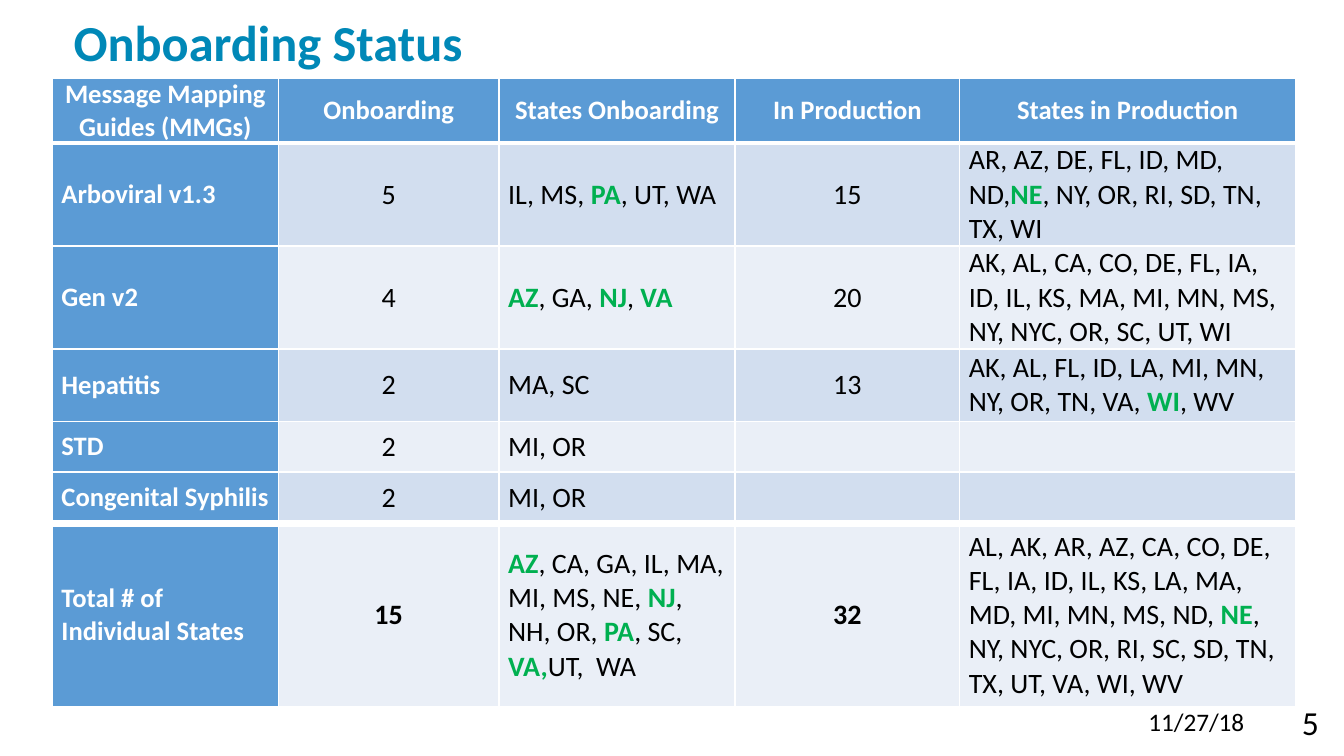
import pptx
import pptx.util
import pptx.dml.color
import pptx.enum.text
import pptx.oxml
import pptx.oxml.ns

Inches, Pt = pptx.util.Inches, pptx.util.Pt
ALIGN = pptx.enum.text.PP_ALIGN
ANCHOR = pptx.enum.text.MSO_ANCHOR
SIZE = (13.33, 7.5)
COLORS = {"title": "0088B7", "head": "5B9BD5", "odd": "D2DEEF", "even": "EAEFF7",
          "new": "00B050", "text": "000000", "white": "FFFFFF"}

# Table grid: widths and heights in inches, rule weights in points
COLS = [2.24, 2.19, 2.34, 2.23, 3.33]
ROWS = [0.61, 1.02, 1.02, 0.72, 0.5, 0.51, 1.82]
RULES = [1, 3, 1, 1, 1, 1, 6, 1]

# States between asterisks are marked in green
DATA = [
    ["Message Mapping Guides (MMGs)", "Onboarding", "States Onboarding",
     "In Production", "States in Production"],
    ["Arboviral v1.3", "5", "IL, MS, *PA*, UT, WA", "15",
     "AR, AZ, DE, FL, ID, MD, ND,*NE*, NY, OR, RI, SD, TN, TX, WI"],
    ["Gen v2", "4", "*AZ*, GA, *NJ*, *VA*", "20",
     "AK, AL, CA, CO, DE, FL, IA, ID, IL, KS, MA, MI, MN, MS, NY, NYC, OR, SC, UT, WI"],
    ["Hepatitis", "2", "MA, SC", "13",
     "AK, AL, FL, ID, LA, MI, MN, NY, OR, TN, VA, *WI*, WV"],
    ["STD", "2", "MI, OR", "", ""],
    ["Congenital Syphilis", "2", "MI, OR", "", ""],
    ["Total # of Individual States", "15",
     "*AZ*, CA, GA, IL, MA, MI, MS, NE, *NJ*, NH, OR, *PA*, SC, *VA,*UT,  WA", "32",
     "AL, AK, AR, AZ, CA, CO, DE, FL, IA, ID, IL, KS, LA, MA, MD, MI, MN, MS, ND, "
     "*NE*, NY, NYC, OR, RI, SC, SD, TN, TX, UT, VA, WI, WV"],
]


def apply(item, values):
    for name, value in values.items():
        setattr(item, name, value)


def paint(name):
    return pptx.dml.color.RGBColor.from_string(COLORS[name])


def write(frame, text, size, color="text", bold=False, align=ALIGN.LEFT):
    para = frame.paragraphs[0]
    para.alignment = align
    for i, part in enumerate(text.split("*")):
        if part:
            run = para.add_run()
            run.text = part
            mark = i % 2 == 1
            apply(run.font, {"name": "Calibri", "size": Pt(size), "bold": bold or mark})
            run.font.color.rgb = paint("new" if mark else color)
    return para


def add_title(slide, box):
    title = slide.shapes.title
    apply(title, dict(zip(("left", "top", "width", "height"), map(Inches, box))))
    apply(title.text_frame, {"vertical_anchor": ANCHOR.BOTTOM, "word_wrap": True,
                             "auto_size": pptx.enum.text.MSO_AUTO_SIZE.NONE})
    para = write(title.text_frame, "Onboarding Status", 36, "title", True)
    para.line_spacing = Pt(40)


def add_rules(cell, row):
    props = cell._tc.get_or_add_tcPr()
    space = pptx.oxml.ns.nsdecls("a")
    for side, weight in zip("LRTB", (1, 1, RULES[row], RULES[row + 1])):
        props.append(pptx.oxml.parse_xml(
            f'<a:ln{side} {space} w="{Pt(weight)}"><a:solidFill>'
            f'<a:srgbClr val="{COLORS["white"]}"/></a:solidFill></a:ln{side}>'))


def fill_cell(cell, row, col, text):
    head = row == 0 or col == 0
    count = col in (1, 3)
    apply(cell, {"vertical_anchor": ANCHOR.MIDDLE, "margin_left": Inches(0.09),
                 "margin_right": Inches(0.09), "margin_top": 0, "margin_bottom": 0})
    add_rules(cell, row)
    cell.fill.solid()
    cell.fill.fore_color.rgb = paint("head" if head else "odd" if row % 2 else "even")
    total = count and row == len(DATA) - 1
    write(cell.text_frame, text, 19 if head else 20, "white" if head else "text",
          head or total, ALIGN.CENTER if row == 0 or count else ALIGN.LEFT)


def add_status(slide, left, top):
    box = map(Inches, (left, top, sum(COLS), sum(ROWS)))
    table = slide.shapes.add_table(len(ROWS), len(COLS), *box).table
    apply(table, {"first_row": False, "horz_banding": False})
    for col, width in zip(table.columns, COLS):
        col.width = Inches(width)
    for row, height in zip(table.rows, ROWS):
        row.height = Inches(height)
    for r, line in enumerate(DATA):
        for c, text in enumerate(line):
            fill_cell(table.cell(r, c), r, c, text)


def add_note(slide, box, text, size, align):
    frame = slide.shapes.add_textbox(*map(Inches, box)).text_frame
    frame.word_wrap = True
    write(frame, text, size, align=align)


def main():
    deck = pptx.Presentation()
    deck.slide_width, deck.slide_height = map(Inches, SIZE)
    slide = deck.slides.add_slide(deck.slide_layouts[5])
    add_title(slide, (0.63, 0.05, 12, 0.71))
    add_status(slide, 0.52, 0.78)
    # Footer: date and slide number
    add_note(slide, (11.29, 6.96, 1.22, 0.4), "11/27/18", 18, ALIGN.LEFT)
    add_note(slide, (11.92, 6.91, 1.26, 0.5), "5", 24, ALIGN.RIGHT)
    deck.save("out.pptx")


if __name__ == "__main__":
    main()
